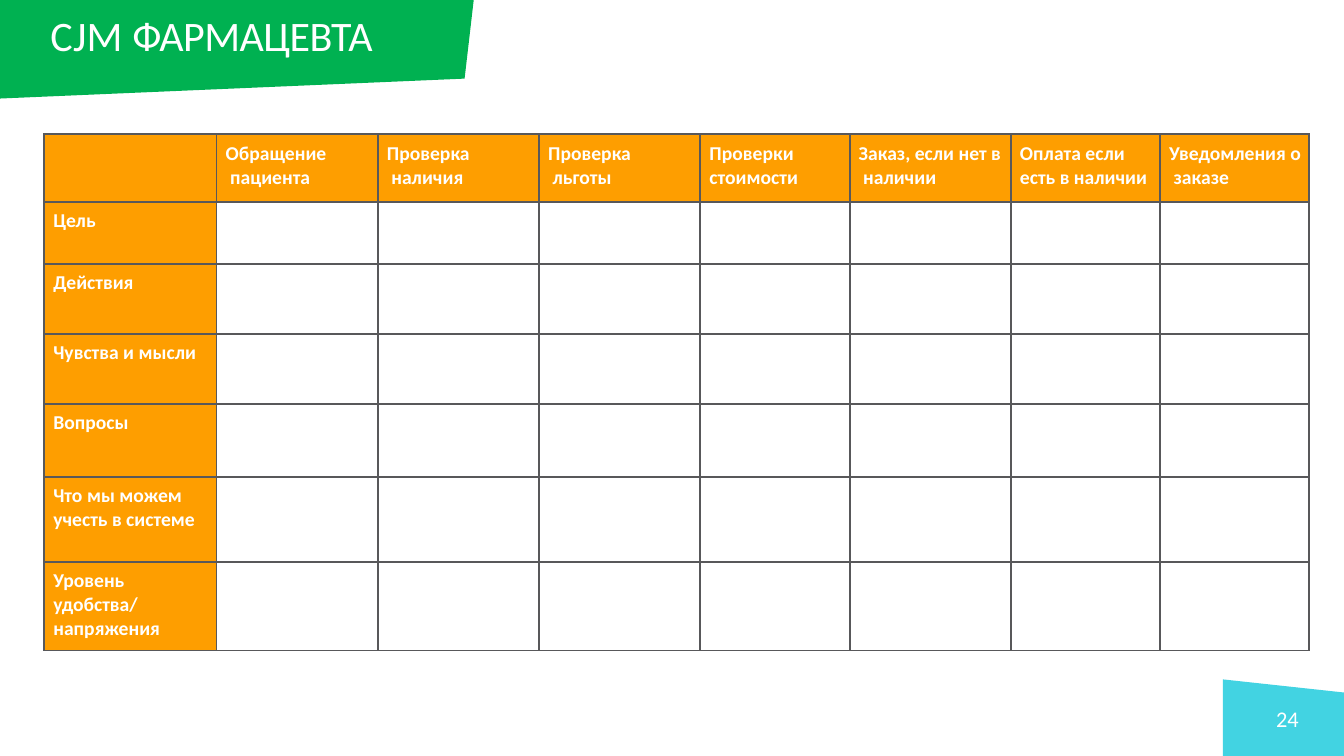
from pptx import Presentation
from pptx.dml.color import RGBColor
from pptx.enum.text import MSO_ANCHOR
from pptx.oxml import parse_xml
from pptx.oxml.ns import nsdecls
from pptx.util import Pt

TOP = MSO_ANCHOR.TOP
FONT = "Calibri"
WHITE, ORANGE, GRAY = "FFFFFF", "FE9E00", "58585A"
GREEN, CYAN = "00B151", "42D3E2"

STAGES = [
    ["Обращение", " пациента"],
    ["Проверка", " наличия"],
    ["Проверка", " льготы"],
    ["Проверки", "стоимости"],
    ["Заказ, если нет в", " наличии"],
    ["Оплата если", "есть в наличии"],
    ["Уведомления о", " заказе"],
]
ASPECTS = [
    ["Цель"],
    ["Действия"],
    ["Чувства и мысли"],
    ["Вопросы"],
    ["Что мы можем", "учесть в системе"],
    ["Уровень", "удобства/", "напряжения"],
]
COL_WIDTHS = [123.1, 115.2, 115.2, 115.2, 106.6, 115.2, 106.6, 106.6]
ROW_HEIGHTS = [48.2, 44.4, 50.1, 49.9, 52.3, 60.6, 63.4]
TABLE_LEFT, TABLE_TOP = 31.6, 95.8

BANNERS = [
    (CYAN, [(873.4, 485.3), (873.4, 540), (960, 540), (960, 494.7)]),
    (GREEN, [(338.4, 0), (0, 0), (0, 70.4), (331.9, 56.2)]),
]
LABELS = [
    ((911.5, 504, 25, 21.6), 16, [("24", 0)]),
    ((36, 6.5, 290, 38), 30, [("CJM ", 0.1), ("ФАРМАЦЕВТА", -0.4)]),
]


def rgb(color):
    return RGBColor.from_string(color)


def add_run(p, text, size, bold=False, spacing=0):
    r = p.add_run()
    r.text = text
    r.font.name = FONT
    r.font.size = Pt(size)
    r.font.bold = bold
    r.font.color.rgb = rgb(WHITE)
    if spacing:
        r.font._element.set("spc", str(round(spacing * 100)))


def add_banner(s, color, points):
    corners = [(Pt(x), Pt(y)) for x, y in points]
    builder = s.shapes.build_freeform(*corners[0])
    builder.add_line_segments(corners[1:], close=True)
    sp = builder.convert_to_shape()
    sp.shadow.inherit = False
    sp.fill.solid()
    sp.fill.fore_color.rgb = rgb(color)
    sp.line.fill.background()


def add_label(s, box, size, runs):
    tf = s.shapes.add_textbox(*map(Pt, box)).text_frame
    tf.word_wrap = True
    tf.margin_left = tf.margin_top = tf.margin_right = tf.margin_bottom = 0
    for text, spacing in runs:
        add_run(tf.paragraphs[0], text, size, spacing=spacing)


def add_borders(cell):
    tcPr = cell._tc.get_or_add_tcPr()
    for i, side in enumerate(("lnL", "lnR", "lnT", "lnB")):
        tcPr.insert(i, parse_xml(
            f'<a:{side} {nsdecls("a")} w="{Pt(1.5)}"><a:solidFill>'
            f'<a:srgbClr val="{GRAY}"/></a:solidFill></a:{side}>'))


def fill_heading(cell, lines):
    cell.fill.solid()
    cell.fill.fore_color.rgb = rgb(ORANGE)
    cell.vertical_anchor = TOP
    cell.margin_left, cell.margin_top = Pt(6.5), Pt(5.3)
    cell.margin_right = cell.margin_bottom = 0
    p = cell.text_frame.paragraphs[0]
    for i, line in enumerate(lines):
        if i:
            p.add_line_break()
        add_run(p, line, 14, bold=True)


def add_journey_table(s):
    box = (TABLE_LEFT, TABLE_TOP, sum(COL_WIDTHS), sum(ROW_HEIGHTS))
    table = s.shapes.add_table(
        len(ROW_HEIGHTS), len(COL_WIDTHS), *map(Pt, box)).table
    table.first_row = table.horz_banding = False
    for column, width in zip(table.columns, COL_WIDTHS):
        column.width = Pt(width)
    for row, height in zip(table.rows, ROW_HEIGHTS):
        row.height = Pt(height)
    for i in range(len(ROW_HEIGHTS)):
        for j in range(len(COL_WIDTHS)):
            cell = table.cell(i, j)
            if i == 0:
                fill_heading(cell, STAGES[j - 1] if j else [])
            elif j == 0:
                fill_heading(cell, ASPECTS[i - 1])
            else:
                cell.fill.background()
            add_borders(cell)


def main():
    prs = Presentation()
    prs.slide_width, prs.slide_height = Pt(960), Pt(540)
    s = prs.slides.add_slide(prs.slide_layouts[6])
    for color, points in BANNERS:
        add_banner(s, color, points)
    add_journey_table(s)
    for box, size, runs in LABELS:
        add_label(s, box, size, runs)
    prs.save("out.pptx")


if __name__ == "__main__":
    main()
